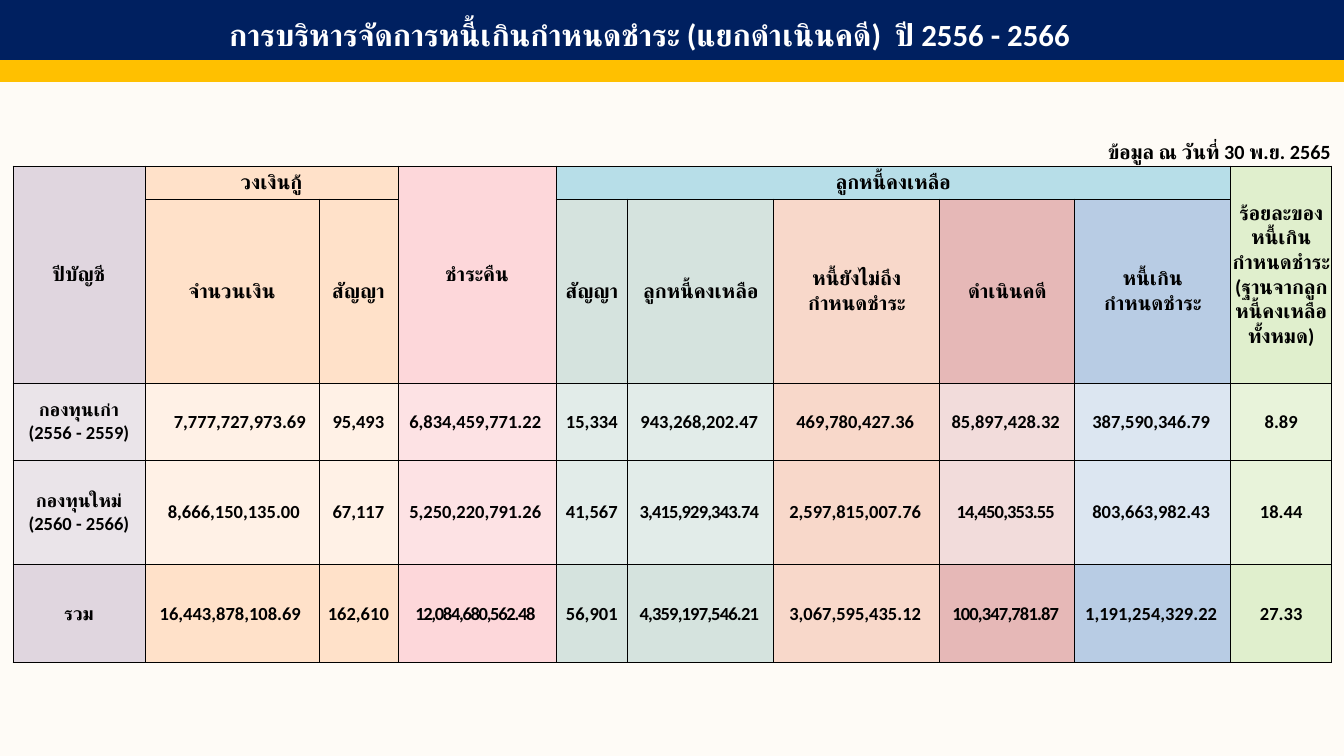
from lxml.etree import SubElement
from pptx import Presentation
from pptx.dml.color import RGBColor
from pptx.enum.shapes import MSO_SHAPE
from pptx.enum.text import MSO_ANCHOR, PP_ALIGN
from pptx.oxml.ns import qn
from pptx.util import Pt

PX = 914400 / 121
FONT = "Calibri"
BLACK = RGBColor(0x00, 0x00, 0x00)
WHITE = RGBColor(0xFF, 0xFF, 0xFF)
CREAM = RGBColor(0xFE, 0xFB, 0xF6)
NAVY = RGBColor(0x00, 0x20, 0x60)
GOLD = RGBColor(0xFF, 0xC0, 0x00)
MAUVE = RGBColor(0xE0, 0xD6, 0xDF)
PALE_MAUVE = RGBColor(0xEA, 0xE4, 0xE9)
PEACH = RGBColor(0xFF, 0xE1, 0xC9)
PALE_PEACH = RGBColor(0xFF, 0xF1, 0xE6)
PINK = RGBColor(0xFD, 0xD7, 0xDA)
PALE_PINK = RGBColor(0xFD, 0xE2, 0xE4)
SKY = RGBColor(0xB7, 0xDE, 0xE8)
SAGE = RGBColor(0xD5, 0xE3, 0xDE)
PALE_SAGE = RGBColor(0xE2, 0xEC, 0xE9)
SALMON = RGBColor(0xF8, 0xD8, 0xCA)
ROSE = RGBColor(0xE6, 0xB8, 0xB7)
PALE_ROSE = RGBColor(0xF2, 0xDC, 0xDB)
BLUE = RGBColor(0xB8, 0xCC, 0xE4)
PALE_BLUE = RGBColor(0xDC, 0xE6, 0xF1)
GREEN = RGBColor(0xE0, 0xEF, 0xCD)
PALE_GREEN = RGBColor(0xE8, 0xF3, 0xDA)

# Width, heading and total colour, yearly colour
COLUMNS = [
    (132, MAUVE, PALE_MAUVE),
    (174, PEACH, PALE_PEACH),
    (79, PEACH, PALE_PEACH),
    (158, PINK, PALE_PINK),
    (72, SAGE, PALE_SAGE),
    (146, SAGE, PALE_SAGE),
    (166, SALMON, SALMON),
    (135, ROSE, PALE_ROSE),
    (156, BLUE, PALE_BLUE),
    (101, GREEN, PALE_GREEN),
]
ROW_HEIGHTS = [28, 33, 184, 77, 104, 99]
DATE_ROW, GROUP_ROW, OLD_FUND, NEW_FUND, TOTAL = 0, 1, 3, 4, 5
DEBTORS = 4
ROWS = [
    ["ข้อมูล ณ วันที่ 30 พ.ย. 2565"] + [""] * 9,
    ["ปีบัญชี", "วงเงินกู้", "", "ชำระคืน", "ลูกหนี้คงเหลือ", "", "", "", "",
     "ร้อยละของหนี้เกิน\vกำหนดชำระ\v(ฐานจากลูกหนี้คงเหลือทั้งหมด)"],
    ["", "จำนวนเงิน", "สัญญา", "", "สัญญา", "ลูกหนี้คงเหลือ",
     "หนี้ยังไม่ถึง\vกำหนดชำระ", "ดำเนินคดี", "หนี้เกิน\vกำหนดชำระ", ""],
    ["กองทุนเก่า\v(2556 - 2559)", "7,777,727,973.69", "95,493",
     "6,834,459,771.22", "15,334", "943,268,202.47", "469,780,427.36",
     "85,897,428.32", "387,590,346.79", "8.89"],
    ["กองทุนใหม่\v(2560 - 2566)", "8,666,150,135.00", "67,117",
     "5,250,220,791.26", "41,567", "3,415,929,343.74", "2,597,815,007.76",
     "14,450,353.55", "803,663,982.43", "18.44"],
    ["รวม", "16,443,878,108.69", "162,610", "12,084,680,562.48", "56,901",
     "4,359,197,546.21", "3,067,595,435.12", "100,347,781.87",
     "1,191,254,329.22", "27.33"],
]
# First row, first column, last row, last column
MERGES = [(0, 0, 0, 9), (1, 0, 2, 0), (1, 1, 1, 2), (1, 3, 2, 3),
          (1, 4, 1, 8), (1, 9, 2, 9)]
LETTER_SPACING = {(NEW_FUND, 5): -50, (NEW_FUND, 7): -50, (TOTAL, 3): -80,
                  (TOTAL, 5): -50, (TOTAL, 7): -50}
LEFT_INSETS = {(OLD_FUND, 1): 20, (NEW_FUND, 1): 8}


def px(length):
    return round(length * PX)


def write(frame, text, size, colour, align):
    frame.text = text
    paragraph = frame.paragraphs[0]
    paragraph.alignment = align
    for run in paragraph.runs:
        run.font.name = FONT
        run.font.size = Pt(size)
        run.font.bold = True
        run.font.color.rgb = colour
        SubElement(run.font._element, qn("a:cs"), typeface=FONT)


prs = Presentation()
prs.slide_width, prs.slide_height = px(1344), px(756)
slide = prs.slides.add_slide(prs.slide_layouts[6])
slide.background.fill.solid()
slide.background.fill.fore_color.rgb = CREAM

debt_table = slide.shapes.add_table(
    len(ROWS), len(COLUMNS), px(13), px(138),
    px(sum(column[0] for column in COLUMNS)), px(sum(ROW_HEIGHTS))).table
debt_table.first_row = False
debt_table.horz_banding = False
for row, height in zip(debt_table.rows, ROW_HEIGHTS):
    row.height = px(height)
for column, (width, _, _) in zip(debt_table.columns, COLUMNS):
    column.width = px(width)

for r, texts in enumerate(ROWS):
    for c, text in enumerate(texts):
        cell = debt_table.cell(r, c)
        is_amount = "," in text and "." in text
        cell.margin_left = px(LEFT_INSETS.get((r, c), 1))
        cell.margin_right = px(4 if is_amount else 1)
        cell.margin_top, cell.margin_bottom = px(1), 0
        cell.vertical_anchor = MSO_ANCHOR.MIDDLE
        write(cell.text_frame, text, 11 if r >= OLD_FUND else 12, BLACK,
              PP_ALIGN.RIGHT if r == DATE_ROW else PP_ALIGN.CENTER)
        if (r, c) in LETTER_SPACING:
            run_font = cell.text_frame.paragraphs[0].runs[0].font
            run_font._element.set("spc", str(LETTER_SPACING[r, c]))

        cell_properties = cell._tc.get_or_add_tcPr()
        for side in ("lnL", "lnR", "lnT", "lnB"):
            border = SubElement(cell_properties, qn(f"a:{side}"), w=str(Pt(0.5)))
            if r == DATE_ROW and side != "lnB":
                SubElement(border, qn("a:noFill"))
            else:
                line_fill = SubElement(border, qn("a:solidFill"))
                SubElement(line_fill, qn("a:srgbClr"), val=str(BLACK))

        _, strong, pale = COLUMNS[c]
        if r == DATE_ROW:
            cell.fill.background()
        else:
            cell.fill.solid()
            if r == GROUP_ROW and DEBTORS <= c < len(COLUMNS) - 1:
                cell.fill.fore_color.rgb = SKY
            else:
                cell.fill.fore_color.rgb = pale if r in (OLD_FUND, NEW_FUND) else strong

for top, left, bottom, right in MERGES:
    debt_table.cell(top, left).merge(debt_table.cell(bottom, right))

for top, height, colour in ((0, 61, NAVY), (61, 20, GOLD)):
    band = slide.shapes.add_shape(MSO_SHAPE.RECTANGLE, 0, px(top), px(1344), px(height))
    band.shadow.inherit = False
    band.fill.solid()
    band.fill.fore_color.rgb = colour
    band.line.color.rgb = colour
    band.line.width = Pt(1)

title = slide.shapes.add_textbox(px(59), px(10), px(1181), px(62)).text_frame
title.word_wrap = True
write(title, "การบริหารจัดการหนี้เกินกำหนดชำระ (แยกดำเนินคดี)  ปี 2556 - 2566",
      18.3, WHITE, PP_ALIGN.CENTER)

prs.save("out.pptx")
